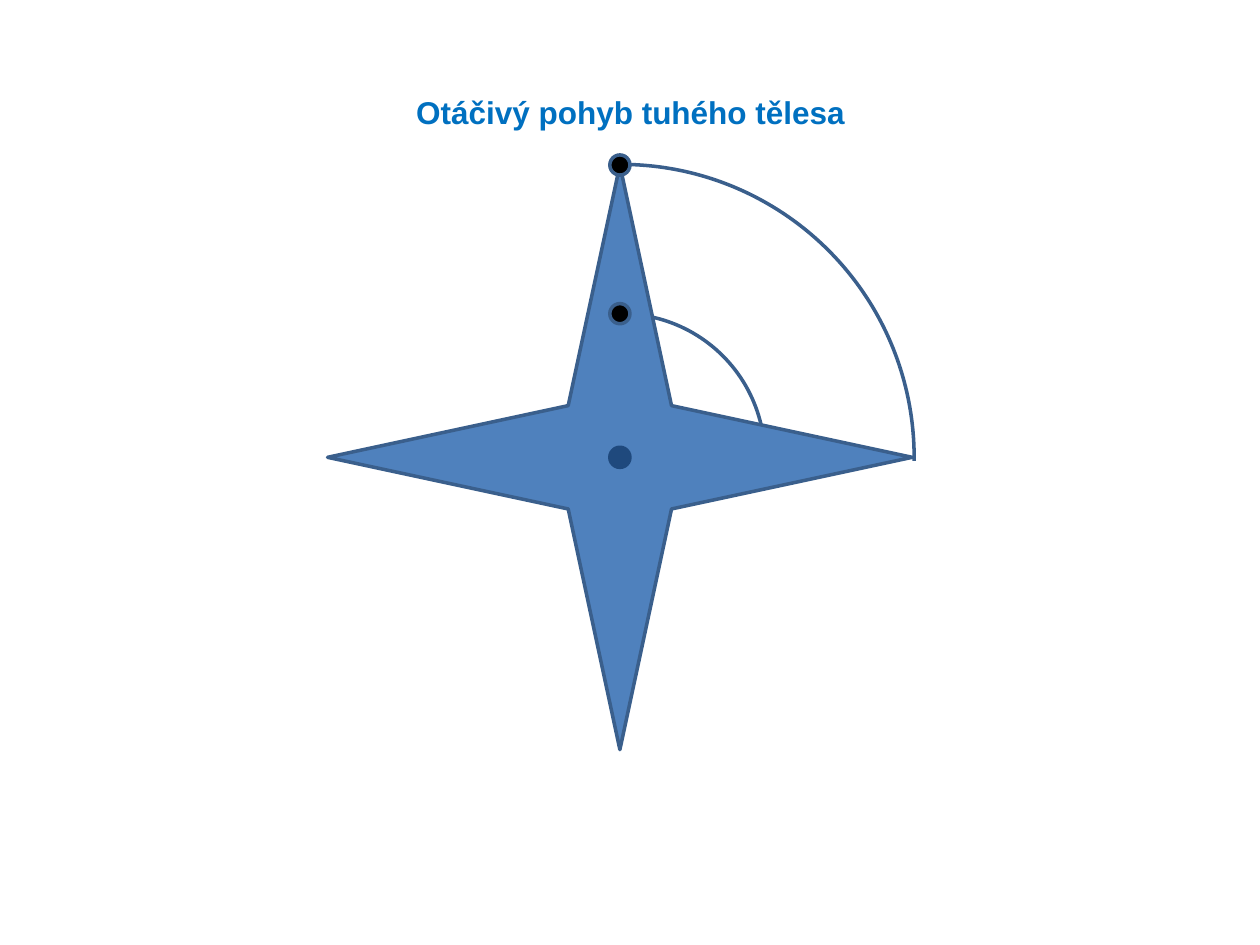
from pptx import Presentation
from pptx import util as u
from pptx.dml.color import RGBColor
from pptx.enum import shapes, text

SHAPE = shapes.MSO_SHAPE
EDGE, WHITE, BLACK, NAVY = "3A5F8C", "FFFFFF", "000000", "1F497D"


def rgb(value):
    return RGBColor.from_string(value)


class Deck:
    font = "Arial"
    line_width = u.Pt(2)

    def __init__(self, width, height):
        self.prs = Presentation()
        self.prs.slide_width = u.Inches(width)
        self.prs.slide_height = u.Inches(height)
        self.s = self.prs.slides.add_slide(self.prs.slide_layouts[5])

    def title(self, wording, box, size, color):
        sp = self.s.shapes.title
        sp.left, sp.top, sp.width, sp.height = map(u.Inches, box)
        tf = sp.text_frame
        tf.text = wording
        tf.word_wrap = True
        tf.auto_size = text.MSO_AUTO_SIZE.SHAPE_TO_FIT_TEXT
        tf.vertical_anchor = text.MSO_ANCHOR.TOP
        p = tf.paragraphs[0]
        p.alignment = text.PP_ALIGN.CENTER
        r = p.runs[0]
        r.font.name, r.font.size, r.font.bold = self.font, u.Pt(size), True
        r.font.color.rgb = rgb(color)

    def shape(self, kind, box, fill=None, line=None, parent=None):
        sp = (parent or self.s).shapes.add_shape(kind, *map(u.Inches, box))
        sp.shadow.inherit = False
        if fill:
            sp.fill.solid()
            sp.fill.fore_color.rgb = rgb(fill)
        else:
            sp.fill.background()
        if line:
            sp.line.color.rgb = rgb(line)
            sp.line.width = self.line_width
        else:
            sp.line.fill.background()
        return sp

    def centred(self, kind, cx, cy, size, **style):
        box = (cx - size / 2, cy - size / 2, size, size)
        return self.shape(kind, box, **style)


def main():
    deck = Deck(10, 7.5)
    cx, cy = 4.92, 3.63

    # Paths of the two marked points
    for diameter in (4.65, 2.28):
        deck.centred(SHAPE.OVAL, 4.93, cy, diameter, line=EDGE)

    deck.title("Otáčivý pohyb tuhého tělesa", (2.17, 0.69, 5.67, 0.4), 18, "0070C0")

    # White covers that leave only the upper right quarter of each path
    pie = deck.centred(SHAPE.PIE, 4.91, 3.66, 4.93, fill=WHITE)
    pie.adjustments[0] = 0
    pie.adjustments[1] = 108.44 * 0.6  # degrees to adjustment units
    deck.shape(SHAPE.RECTANGLE, (1.54, 1.13, 3.37, 5.77), fill=WHITE)

    # Rotating body with its axis and marked points
    body = deck.s.shapes.add_group_shape()
    deck.centred(SHAPE.STAR_4_POINT, cx, cy, 4.64, fill="4F81BD", line=EDGE, parent=body)
    for y, fill, line in ((cy, NAVY, NAVY), (1.31, BLACK, EDGE), (2.49, BLACK, EDGE)):
        deck.centred(SHAPE.OVAL, cx, y, 0.16, fill=fill, line=line, parent=body)

    deck.prs.save("out.pptx")


if __name__ == "__main__":
    main()
